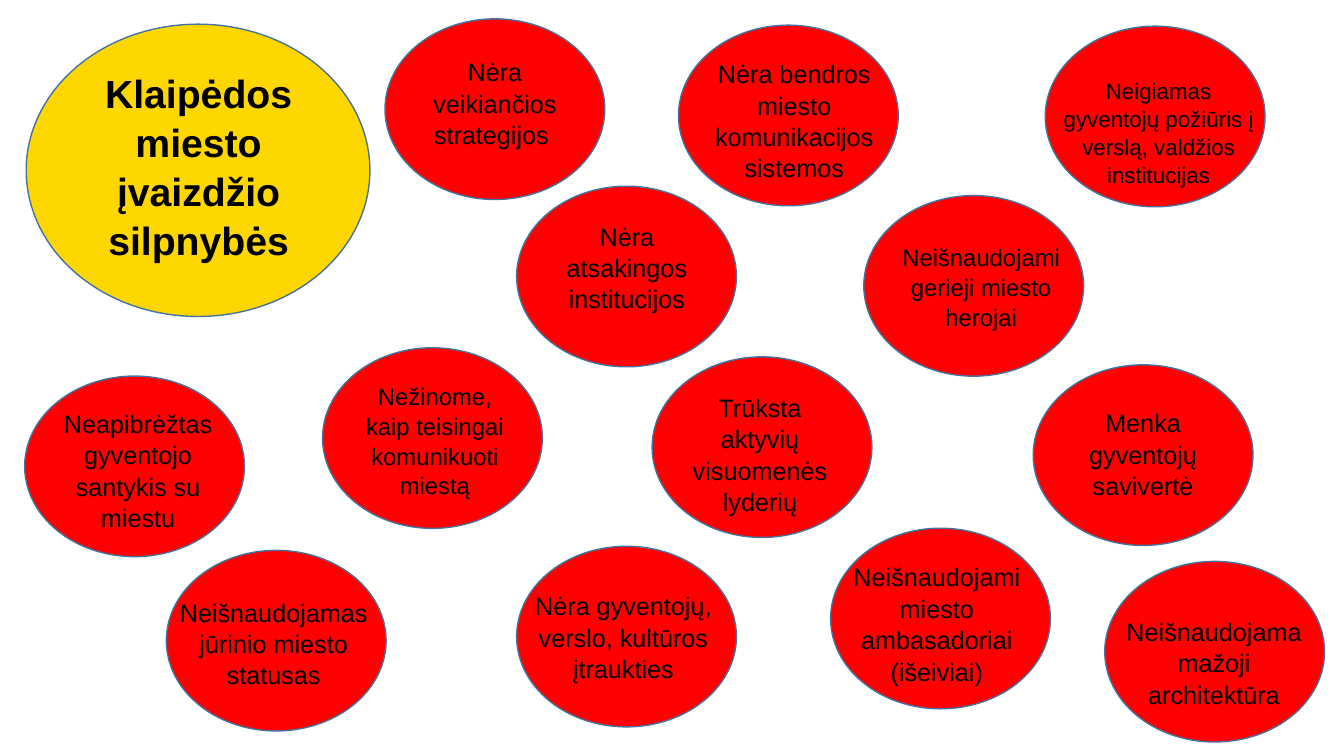
from dataclasses import dataclass

from pptx import Presentation
from pptx.dml.color import RGBColor
from pptx.enum.shapes import MSO_SHAPE as Shape
from pptx.enum.text import MSO_ANCHOR as Anchor, MSO_AUTO_SIZE as AutoSize, PP_ALIGN as Align
from pptx.util import Pt


@dataclass(frozen=True)
class Theme:
    font: str = "Arial"
    text: RGBColor = RGBColor(0, 0, 0)
    heading_fill: RGBColor = RGBColor(0xFF, 0xD7, 0x00)
    weakness_fill: RGBColor = RGBColor(0xFF, 0x00, 0x00)
    outline: RGBColor = RGBColor(0x43, 0x73, 0x9E)
    heading_size: int = 28
    large: int = 18
    medium: int = 17
    small: int = 16
    line_spacing: float = 1.04


theme = Theme()


def add_ellipse(shapes, left, top, width, height, fill):
    ellipse = shapes.add_shape(Shape.OVAL, Pt(left), Pt(top), Pt(width), Pt(height))
    ellipse.shadow.inherit = False
    ellipse.fill.solid()
    ellipse.fill.fore_color.rgb = fill
    ellipse.line.color.rgb = theme.outline
    ellipse.line.width = Pt(1)
    return ellipse


def write_text(box, text, size, bold=False):
    frame = box.text_frame
    frame.word_wrap = True
    frame.auto_size = AutoSize.NONE
    frame.vertical_anchor = Anchor.TOP
    paragraph = frame.paragraphs[0]
    paragraph.alignment = Align.CENTER
    paragraph.line_spacing = theme.line_spacing
    run = paragraph.add_run()
    run.text = text
    run.font.name = theme.font
    run.font.size = Pt(size)
    run.font.bold = bold
    run.font.color.rgb = theme.text


presentation = Presentation()
presentation.slide_width = Pt(960)
presentation.slide_height = Pt(540)
slide = presentation.slides.add_slide(presentation.slide_layouts[5])

# Heading: the title sits in front of its ellipse
heading_ellipse = add_ellipse(slide.shapes, 18.7, 17.3, 245.5, 208.8, theme.heading_fill)
title = slide.shapes.title
title.left, title.top, title.width, title.height = Pt(36), Pt(44.6), Pt(211.7), Pt(143.3)
write_text(title, "Klaipėdos miesto įvaizdžio silpnybės", theme.heading_size, bold=True)
heading_ellipse._element.addnext(title._element)

# Weaknesses: ellipse left and top, text left, top, width and height, size, text
ELLIPSE_WIDTH, ELLIPSE_HEIGHT = 157, 129
weaknesses = [
    (275, 13.5, 293.8, 36, 119.5, 94.3, theme.large, "Nėra veikiančios strategijos "),
    (484.6, 18, 497.5, 37.4, 139.7, 116.6, theme.large,
     "Nėra bendros miesto komunikacijos sistemos"),
    (369, 133, 393.1, 153.4, 109.4, 94.3, theme.large, "Nėra atsakingos institucijos"),
    (230.4, 248.4, 250.6, 268.6, 120.2, 110.2, theme.medium,
     "Nežinome, kaip teisingai komunikuoti miestą"),
    (17.6, 268.6, 36, 287.3, 125.3, 116.6, theme.large,
     "Neapibrėžtas gyventojo santykis su miestu"),
    (118.8, 393.1, 118.8, 421.9, 153.4, 94.3, theme.large,
     "Neišnaudojamas jūrinio miesto statusas"),
    (369, 390.2, 375.1, 417.6, 140.4, 94.3, theme.large,
     "Nėra gyventojų, verslo, kultūros įtraukties"),
    (465.8, 254.9, 475.9, 275.8, 133.9, 116.6, theme.large,
     "Trūksta aktyvių visuomenės lyderių"),
    (617, 139.7, 635, 169.2, 131.8, 90, theme.medium,
     "Neišnaudojami gerieji miesto herojai"),
    (593.3, 377.3, 601.9, 396.7, 134.6, 116.6, theme.large,
     "Neišnaudojami miesto ambasadoriai (išeiviai)"),
    (746.6, 18.7, 750.2, 51.1, 154.8, 104.4, theme.small,
     "Neigiamas gyventojų požiūris į verslą, valdžios institucijas"),
    (738, 260.6, 752.4, 286.6, 128.2, 94.3, theme.large, "Menka gyventojų savivertė"),
    (789.1, 401, 796.3, 435.6, 141.8, 94.3, theme.large,
     "Neišnaudojama mažoji architektūra"),
]
for left, top, text_left, text_top, text_width, text_height, size, text in weaknesses:
    group = slide.shapes.add_group_shape()
    add_ellipse(group.shapes, left, top, ELLIPSE_WIDTH, ELLIPSE_HEIGHT, theme.weakness_fill)
    label = group.shapes.add_textbox(Pt(text_left), Pt(text_top), Pt(text_width), Pt(text_height))
    write_text(label, text, size)

presentation.save("out.pptx")
